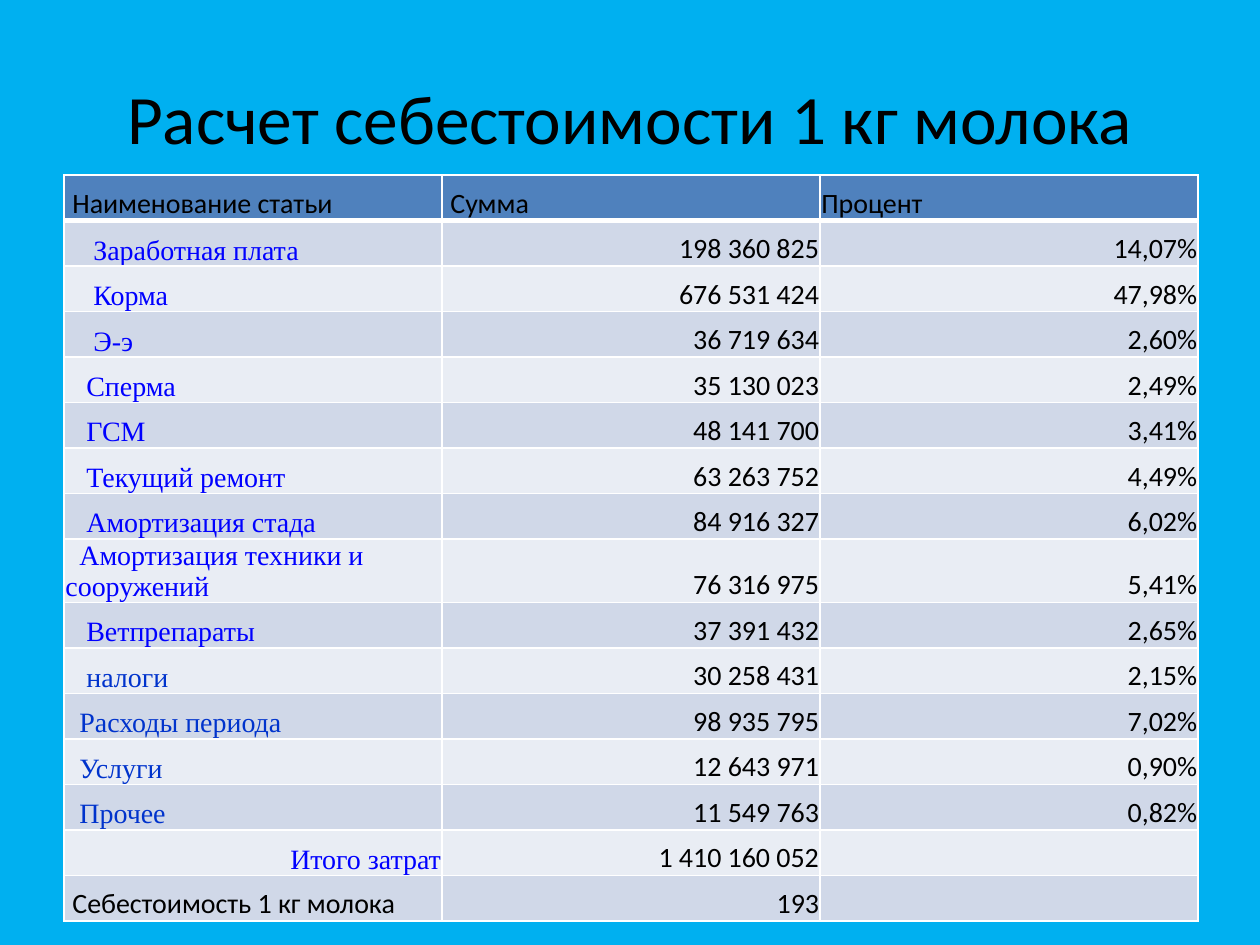
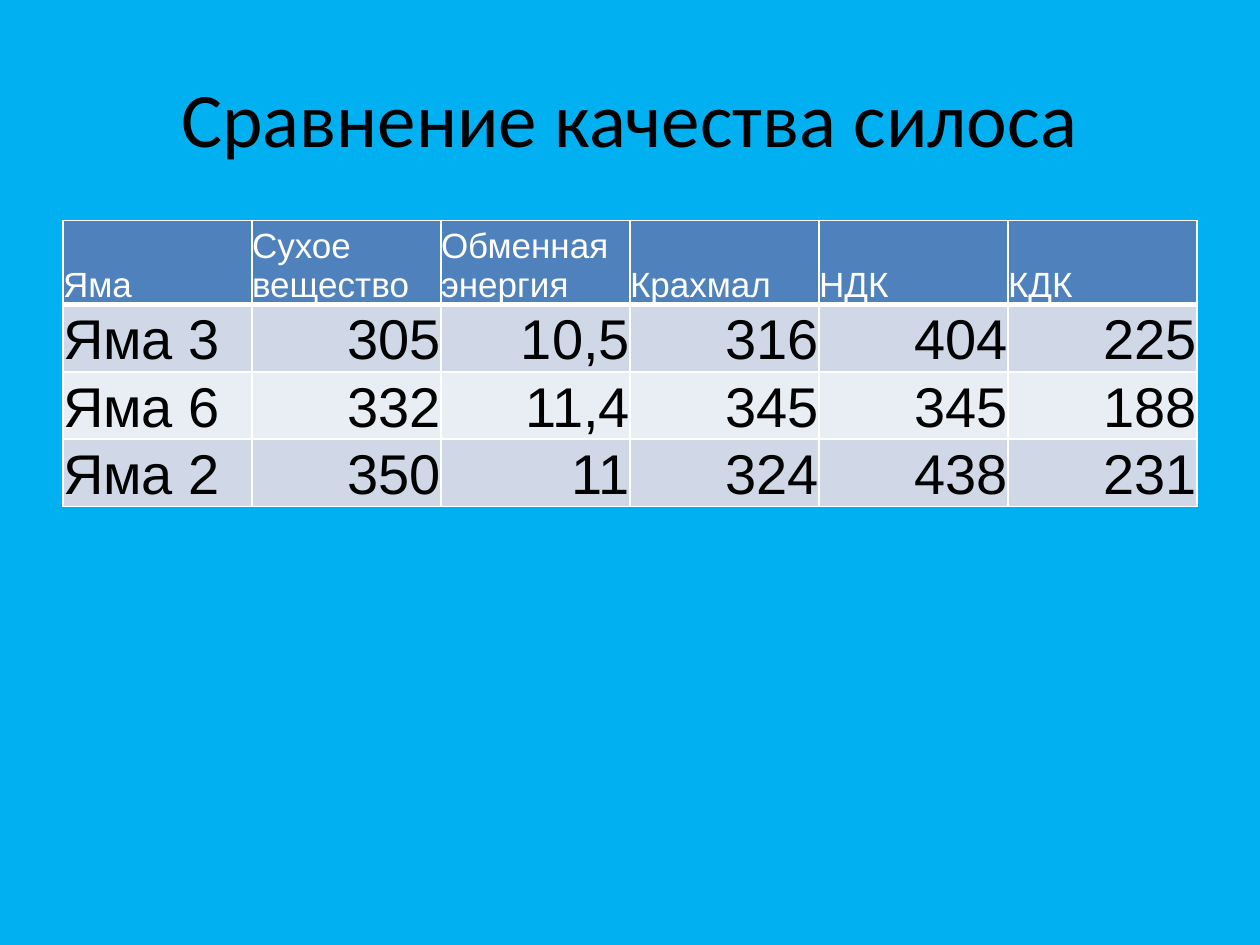
"""Build two slides with tables on milk cost and silage quality."""
from lxml.etree import SubElement
from pptx import Presentation
from pptx.dml.color import RGBColor
from pptx.enum.text import MSO_ANCHOR, PP_ALIGN
from pptx.oxml.ns import qn
from pptx.util import Pt

SKY, HEAD, BANDS = "00B0F0", "4F81BD", ("D0D8E8", "E9EDF4")
BLACK, WHITE, BLUE, NAVY = "000000", "FFFFFF", "0000FF", "0033CC"
SERIF = "Times New Roman"


def ink(text):
    return RGBColor.from_string(text)


def write(para, text, face, size, hue, align):
    para.alignment = align
    run = para.add_run()
    run.text = text
    look = {"name": face, "size": Pt(size), "bold": False}
    for key, val in look.items():
        setattr(run.font, key, val)
    run.font.color.rgb = ink(hue)


costs = [
    ("Наименование статьи", "Сумма", "Процент"),
    ("Заработная плата", "198 360 825", "14,07%"),
    ("Корма", "676 531 424", "47,98%"),
    ("Э-э", "36 719 634", "2,60%"),
    ("Сперма", "35 130 023", "2,49%"),
    ("ГСМ", "48 141 700", "3,41%"),
    ("Текущий ремонт", "63 263 752", "4,49%"),
    ("Амортизация стада", "84 916 327", "6,02%"),
    ("Амортизация техники и сооружений", "76 316 975", "5,41%"),
    ("Ветпрепараты", "37 391 432", "2,65%"),
    ("налоги", "30 258 431", "2,15%"),
    ("Расходы периода", "98 935 795", "7,02%"),
    ("Услуги", "12 643 971", "0,90%"),
    ("Прочее", "11 549 763", "0,82%"),
    ("Итого затрат", "1 410 160 052", ""),
    ("Себестоимость 1 кг молока", "193", ""),
]
silage = [
    ("Яма", "Сухое вещество", "Обменная энергия", "Крахмал", "НДК", "КДК"),
    ("Яма 3", "305", "10,5", "316", "404", "225"),
    ("Яма 6", "332", "11,4", "345", "345", "188"),
    ("Яма 2", "350", "11", "324", "438", "231"),
]

cost_fonts = [("Calibri", 16, BLACK)] + [(SERIF, 16, BLUE)] * 9
cost_fonts += [(SERIF, 16, NAVY)] * 4 + [(SERIF, 16, BLUE), ("Calibri", 16, BLACK)]
pages = [
    {"title": "Расчет себестоимости 1 кг молока", "size": 39.6,
     "rows": costs, "left": 36.7, "top": 100.1, "pad": 0.7,
     "highs": [26] * 8 + [36] + [26] * 7,
     "firsts": cost_fonts, "head": ("Calibri", 16, BLACK),
     "body": ("Calibri", 16, BLACK),
     "dents": [4] + [16] * 3 + [12] * 4 + [8] + [12] * 2 + [8] * 3 + [0, 4],
     "ends": ("Итого затрат",)},
    {"title": "Сравнение качества силоса", "size": 44,
     "rows": silage, "left": 36, "top": 126, "pad": 0,
     "highs": [44.6] + [35.8] * 3,
     "firsts": [("Arial", 20, WHITE)] + [("Arial", 32, BLACK)] * 3,
     "head": ("Arial", 20, WHITE), "body": ("Arial", 32, BLACK),
     "dents": [0] * 4, "ends": ()},
]

deck = Presentation()
deck.slide_width, deck.slide_height = Pt(720), Pt(540)

for page in pages:
    slide = deck.slides.add_slide(deck.slide_layouts[6])
    slide.background.fill.solid()
    slide.background.fill.fore_color.rgb = ink(SKY)

    rows, highs = page["rows"], page["highs"]
    wide = 648 / len(rows[0])
    frame = slide.shapes.add_table(
        len(rows), len(rows[0]), Pt(page["left"]), Pt(page["top"]),
        Pt(648), Pt(sum(highs)))
    table = frame.table
    table.first_row = table.horz_banding = False
    for col in table.columns:
        col.width = Pt(wide)

    for r, row in enumerate(rows):
        table.rows[r].height = Pt(highs[r])
        for c, text in enumerate(row):
            cell = table.cell(r, c)
            pad = Pt(page["pad"])
            look = {"margin_left": pad, "margin_right": pad, "margin_top": pad,
                    "margin_bottom": 0, "vertical_anchor": MSO_ANCHOR.BOTTOM}
            for key, val in look.items():
                setattr(cell, key, val)

            props = cell._tc.get_or_add_tcPr()
            thick = {"L": 1, "R": 1, "T": 3 if r == 1 else 1, "B": 1 if r else 3}
            for side, width in thick.items():
                line = SubElement(props, qn(f"a:ln{side}"), w=str(Pt(width)))
                fill = SubElement(line, qn("a:solidFill"))
                SubElement(fill, qn("a:srgbClr"), val=WHITE)
            cell.fill.solid()
            cell.fill.fore_color.rgb = ink(BANDS[(r - 1) % 2] if r else HEAD)

            if text:
                para = cell.text_frame.paragraphs[0]
                right = r and c or text in page["ends"]
                align = PP_ALIGN.RIGHT if right else PP_ALIGN.LEFT
                font = page["body"] if r else page["head"]
                if c == 0:
                    font = page["firsts"][r]
                write(para, text, *font, align)
                dent = page["dents"][r] if c == 0 else 4 if c == 1 and page["dents"][0] and r == 0 else 0
                if dent:
                    para._p.get_or_add_pPr().set("indent", str(Pt(dent)))

    box = slide.shapes.add_textbox(Pt(36), Pt(21.6), Pt(648), Pt(90))
    box.text_frame.word_wrap = True
    box.text_frame.vertical_anchor = MSO_ANCHOR.MIDDLE
    write(box.text_frame.paragraphs[0], page["title"], "Calibri",
          page["size"], BLACK, PP_ALIGN.CENTER)

deck.save("out.pptx")
